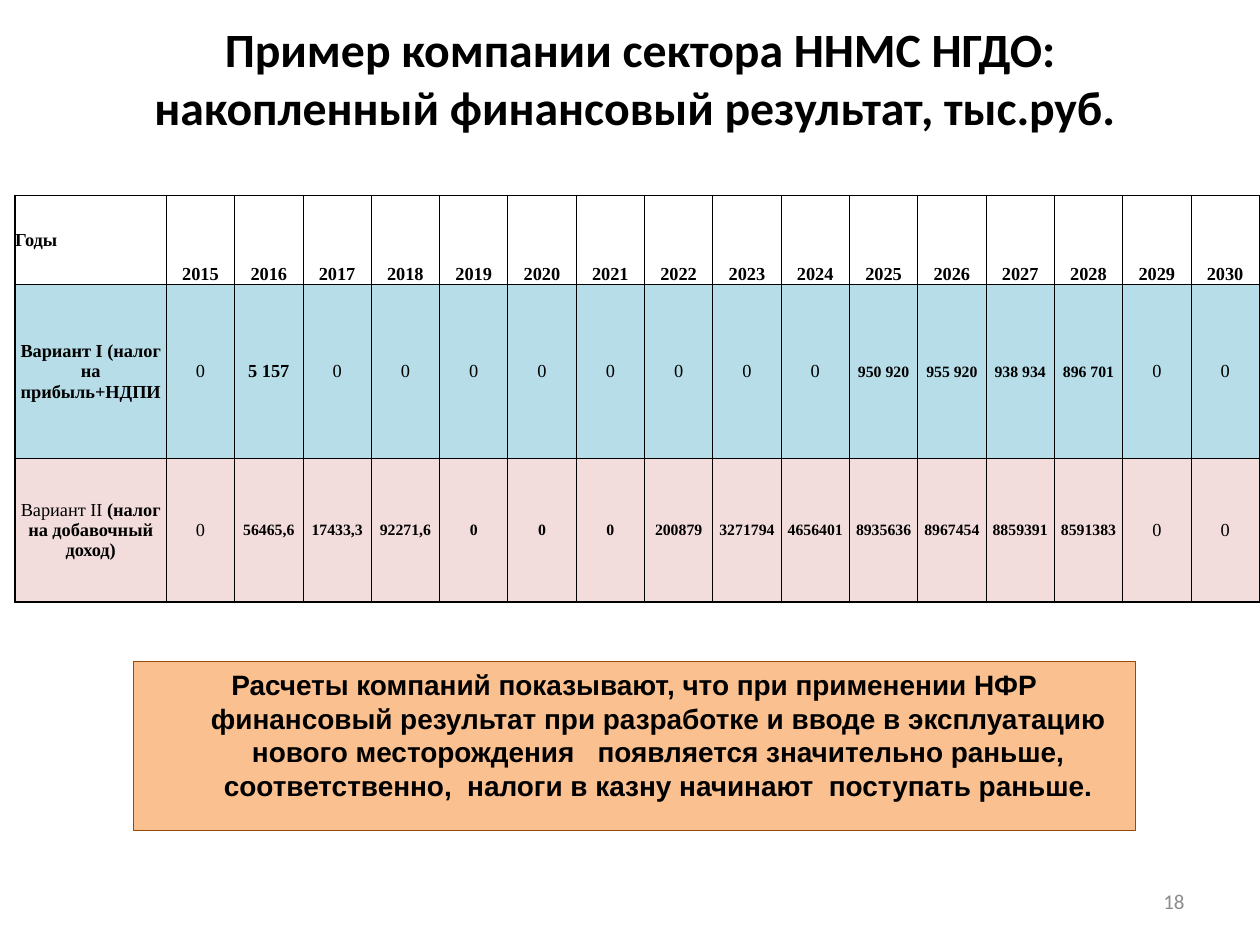
from lxml.etree import SubElement
from pptx import Presentation
from pptx.dml.color import RGBColor
from pptx.enum.shapes import MSO_SHAPE
from pptx.enum.text import MSO_ANCHOR as Anchor, MSO_AUTO_SIZE as AutoSize, PP_ALIGN as Align
from pptx.oxml.ns import qn
from pptx.util import Emu, Inches, Pt

TABLE_FONT = "Times New Roman"
PLAIN = dict(name=TABLE_FONT, size=Pt(10.5), bold=False)
BOLD = dict(PLAIN, bold=True)
SMALL = dict(BOLD, size=Pt(9))


def color(value):
    return RGBColor.from_string(value)


def assign(target, values):
    for key, value in values.items():
        setattr(target, key, value)


def cells(style, *values):
    return [[(value, style)] for value in values]


class SlideBuilder:
    ink = "000000"
    no_insets = dict(margin_left=0, margin_top=0, margin_right=0, margin_bottom=0)

    def __init__(self, slide):
        self.slide = slide

    def add_runs(self, frame, runs, align, ink=None):
        paragraph = frame.paragraphs[0]
        paragraph.alignment = align
        for wording, style in runs:
            run = paragraph.add_run()
            run.text = wording
            assign(run.font, style)
            run.font.color.rgb = color(ink or self.ink)
        return paragraph

    def title(self, box, lines, style):
        heading = self.slide.shapes.title
        assign(heading, dict(zip(("left", "top", "width", "height"), map(Inches, box))))
        frame = heading.text_frame
        assign(frame, dict(auto_size=AutoSize.NONE, word_wrap=True,
                           vertical_anchor=Anchor.MIDDLE))
        paragraph = frame.paragraphs[0]
        paragraph.alignment = Align.CENTER
        paragraph.text = "\v".join(lines)
        for run in paragraph.runs:
            assign(run.font, style)
            run.font.color.rgb = color(self.ink)

    def text(self, box, wording, style, align, ink):
        frame = self.slide.shapes.add_textbox(*map(Inches, box)).text_frame
        assign(frame, dict(word_wrap=True, vertical_anchor=Anchor.MIDDLE))
        self.add_runs(frame, [(wording, style)], align, ink)

    def callout(self, box, wording, style, fill, line, indent):
        panel = self.slide.shapes.add_shape(MSO_SHAPE.RECTANGLE, *map(Inches, box))
        panel.shadow.inherit = False
        panel.fill.solid()
        panel.fill.fore_color.rgb = color(fill)
        panel.line.color.rgb = color(line)
        panel.line.width = Pt(0.75)
        assign(panel.text_frame, dict(word_wrap=True, vertical_anchor=Anchor.TOP))
        paragraph = self.add_runs(panel.text_frame, [(wording, style)], Align.CENTER)
        properties = paragraph._p.get_or_add_pPr()
        properties.set("marL", str(Inches(indent)))
        properties.set("indent", str(-Inches(indent)))

    def borders(self, cell, outer_sides):
        properties = cell._tc.get_or_add_tcPr()
        for position, side in enumerate("LRTB"):
            width = Pt(1 if side in outer_sides else 0.5)
            border = properties.makeelement(qn(f"a:ln{side}"), {"w": str(width)})
            fill = SubElement(border, qn("a:solidFill"))
            SubElement(fill, qn("a:srgbClr"), {"val": self.ink})
            properties.insert(position, border)

    def table(self, box, label_width, heights, rows, fills):
        row_count, column_count = len(rows), len(rows[0])
        left, top, width, height = map(Inches, box)
        grid = self.slide.shapes.add_table(
            row_count, column_count, left, top, width, height).table
        assign(grid, dict(first_row=False, horz_banding=False))
        year_width = Emu((width - Inches(label_width)) // (column_count - 1))
        for index, column in enumerate(grid.columns):
            column.width = year_width if index else Inches(label_width)
        for row, row_height in zip(grid.rows, heights):
            row.height = Inches(row_height)
        for r, (row, fill) in enumerate(zip(rows, fills)):
            for c, runs in enumerate(row):
                cell = grid.cell(r, c)
                year = r == 0 and c > 0
                assign(cell, dict(self.no_insets, vertical_anchor=(
                    Anchor.BOTTOM if year else Anchor.MIDDLE)))
                if fill:
                    cell.fill.solid()
                    cell.fill.fore_color.rgb = color(fill)
                else:
                    cell.fill.background()
                align = Align.LEFT if r == c == 0 else Align.CENTER
                self.add_runs(cell.text_frame, runs, align)
                edges = dict(L=c == 0, R=c == column_count - 1,
                             T=r == 0, B=r == row_count - 1)
                self.borders(cell, [side for side, outer in edges.items() if outer])


def main():
    deck = Presentation()
    assign(deck, dict(slide_width=Inches(10), slide_height=Inches(7.5)))
    builder = SlideBuilder(deck.slides.add_slide(deck.slide_layouts[5]))

    builder.title(
        (0.39, 0.31, 9.38, 0.61),
        ["Пример компании сектора ННМС НГДО:",
         "накопленный финансовый результат, тыс.руб. "],
        dict(name="Calibri", size=Pt(27.3), bold=True))
    builder.text((7.17, 6.95, 2.33, 0.4), "18",
                 dict(name="Calibri", size=Pt(12)), Align.RIGHT, "8C8C8C")

    years = cells(BOLD, "Годы", *map(str, range(2015, 2031)))
    profit_tax = (
        cells(BOLD, "Вариант I (налог на прибыль+НДПИ")
        + cells(PLAIN, "0") + cells(BOLD, "5 157") + cells(PLAIN, *"0" * 8)
        + cells(SMALL, "950 920", "955 920", "938 934", "896 701")
        + cells(PLAIN, "0", "0"))
    added_income_tax = (
        [[("Вариант II ", PLAIN), ("(налог на добавочный доход)", BOLD)]]
        + cells(PLAIN, "0")
        + cells(SMALL, "56465,6", "17433,3", "92271,6", "0", "0", "0",
                "200879", "3271794", "4656401", "8935636", "8967454",
                "8859391", "8591383")
        + cells(PLAIN, "0", "0"))
    builder.table((0.12, 1.55, 9.88, 3.23), 1.2, (0.71, 1.38, 1.14),
                  [years, profit_tax, added_income_tax],
                  [None, "B6DDE8", "F2DDDC"])

    builder.callout(
        (1.06, 5.25, 7.95, 1.34),
        "Расчеты компаний показывают, что при применении НФР финансовый "
        "результат при разработке и вводе в эксплуатацию нового "
        "месторождения   появляется значительно раньше, соответственно,  "
        "налоги в казну начинают  поступать раньше.",
        dict(name="Arial", size=Pt(16), bold=True), "FAC090", "984807", 0.38)
    deck.save("out.pptx")


if __name__ == "__main__":
    main()
